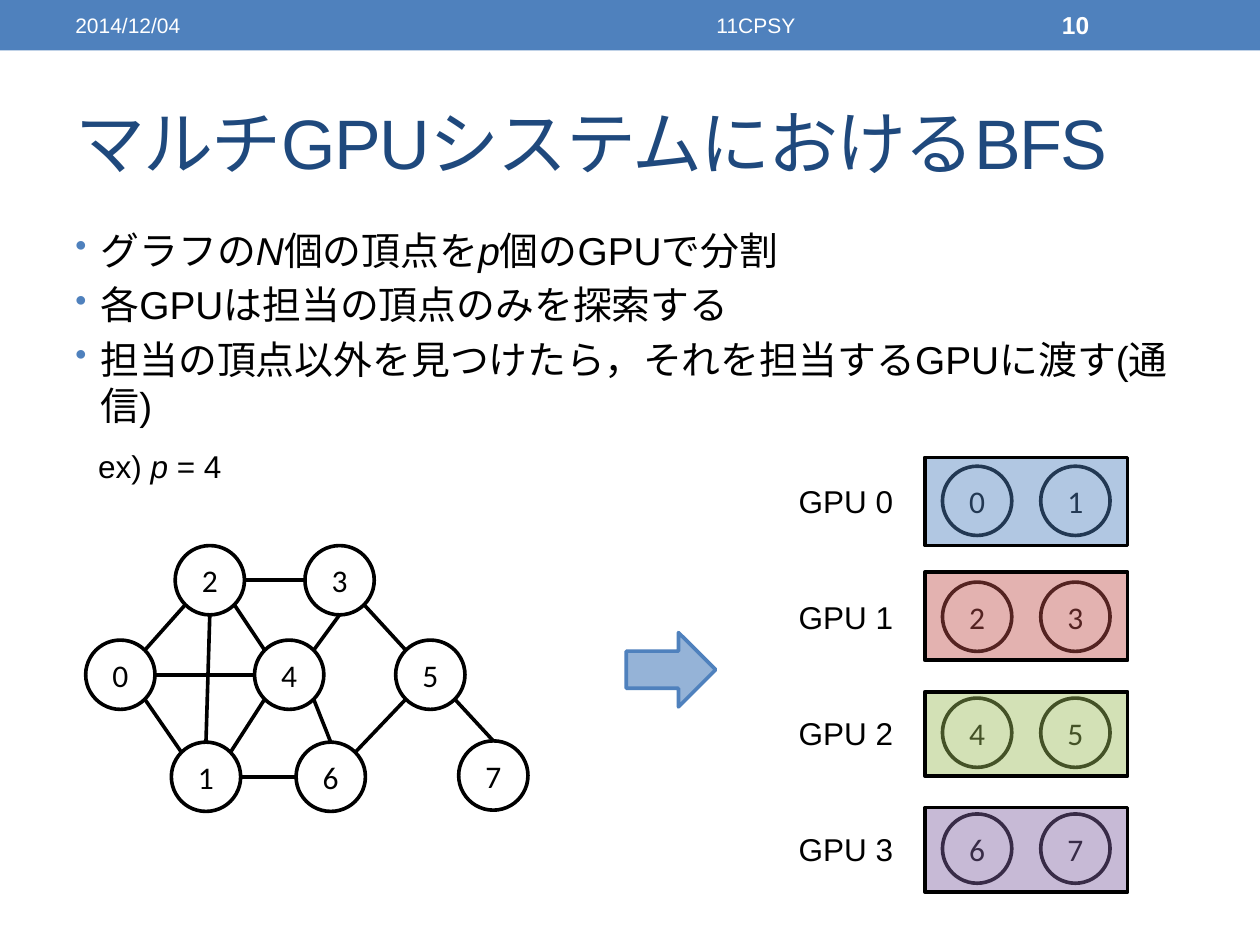
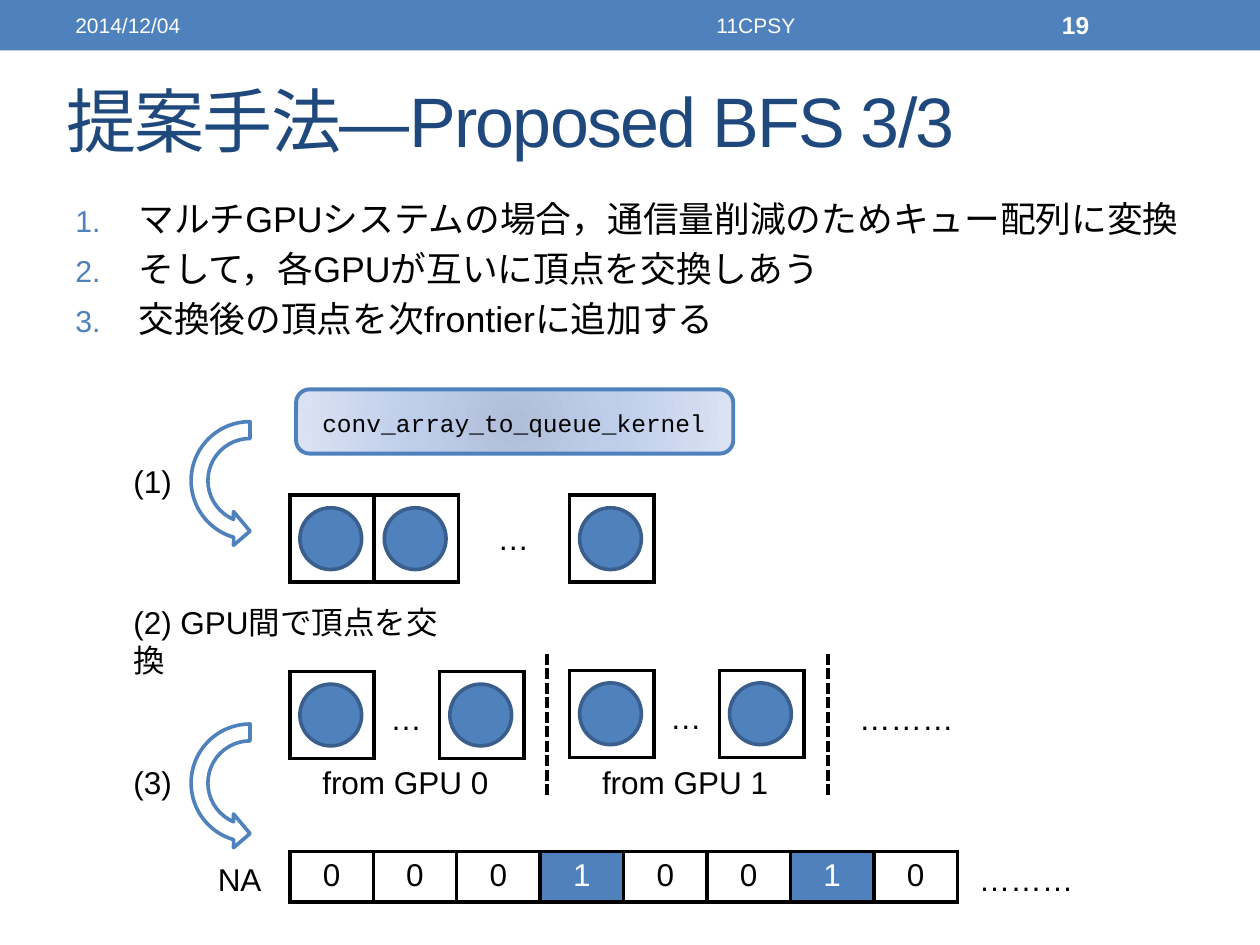
from dataclasses import dataclass
from math import sqrt

from lxml.etree import SubElement
from pptx import Presentation
from pptx.dml.color import RGBColor as RGB
from pptx.enum.dml import MSO_LINE as Dash
from pptx.enum.lang import MSO_LANGUAGE_ID as Lang
from pptx.enum.shapes import MSO_CONNECTOR as Conn, MSO_SHAPE as Kind
from pptx.enum.text import MSO_ANCHOR as Anchor, PP_ALIGN as Align
from pptx.oxml.ns import qn
from pptx.util import Inches, Pt


@dataclass(frozen=True)
class Theme:
    blue: str = "4F81BD"
    navy: str = "1F497D"
    pale: str = "95B3D7"
    edge: str = "3A5F8C"
    red: str = "C0504D"
    green: str = "9BBB59"
    mauve: str = "8064A2"
    black: str = "000000"
    white: str = "FFFFFF"
    sans: str = "Arial"
    round: str = "Calibri"
    mono: str = "Courier New"
    head: float = 40
    label: float = 18
    code: float = 14
    foot: float = 12
    line: float = 2.08
    border: float = 2.25


T = Theme()


def add(parent, tag, **attrs):
    return SubElement(parent, qn(tag), {k: str(v) for k, v in attrs.items()})


class Deck:
    def __init__(self):
        self.prs = Presentation()
        self.prs.slide_width = Inches(10)
        self.prs.slide_height = Inches(7.5)

    def start(self, title, number, left, top):
        self.slide = self.prs.slides.add_slide(self.prs.slide_layouts[6])
        self.shapes = self.slide.shapes
        self.shape(Kind.RECTANGLE, (0, 0, 10, 0.4), T.blue, None)
        self.text(title, (left, top, 9, 1.08), wrap=True, anchor=Anchor.MIDDLE,
                  size=T.head, color=T.navy, track=-100)
        bar = dict(wrap=True, anchor=Anchor.MIDDLE, color=T.white)
        self.text("2014/12/04", (0.5, 0.02, 3.17, 0.36), size=T.foot, **bar)
        self.text("11CPSY", (3.75, 0.02, 4.5, 0.36), size=T.foot,
                  align=Align.CENTER, **bar)
        self.text(str(number), (8.33, 0.02, 1.17, 0.36), size=T.code,
                  bold=True, **bar)

    def fill_in(self, para, parts, size=T.label, color=T.black, face=T.sans,
                bold=False, align=Align.LEFT, track=None):
        para.alignment = align
        for part in [parts] if isinstance(parts, str) else parts:
            words, slant = (part, False) if isinstance(part, str) else part
            run = para.add_run()
            run.text = words
            look = dict(name=face, size=Pt(size), bold=bold, italic=slant,
                        language_id=Lang.JAPANESE)
            for key, value in look.items():
                setattr(run.font, key, value)
            run.font.color.rgb = RGB.from_string(color)
            props = run._r.get_or_add_rPr()
            add(props, "a:ea", typeface=face)
            if track:
                props.set("spc", str(track))

    def text(self, parts, at, wrap=False, anchor=Anchor.TOP, **look):
        frame = self.shapes.add_textbox(*map(Inches, at)).text_frame
        frame.word_wrap = wrap
        frame.vertical_anchor = anchor
        self.fill_in(frame.paragraphs[0], parts, **look)

    def items(self, rows, at, size, indent, mark, **kind):
        frame = self.shapes.add_textbox(*map(Inches, at)).text_frame
        frame.word_wrap = True
        for i, parts in enumerate(rows):
            para = frame.add_paragraph() if i else frame.paragraphs[0]
            para.space_before = Pt(round(size * 0.2, 1))
            self.fill_in(para, parts, size=size)
            props = para._p.get_or_add_pPr()
            props.set("marL", str(Inches(indent)))
            props.set("indent", str(-Inches(indent)))
            add(add(props, "a:buClr"), "a:srgbClr", val=T.blue)
            add(props, "a:buSzPct", val=85000)
            add(props, mark, **kind)

    def shape(self, kind, at, fill=None, line=T.black, width=T.line,
              alpha=None, words=None):
        item = self.shapes.add_shape(kind, *map(Inches, at))
        item.shadow.inherit = False
        if fill:
            item.fill.solid()
            item.fill.fore_color.rgb = RGB.from_string(fill)
        else:
            item.fill.background()
        if alpha:
            tint = item._element.spPr.find(".//" + qn("a:srgbClr"))
            add(tint, "a:alpha", val=alpha * 1000)
        if line:
            item.line.color.rgb = RGB.from_string(line)
            item.line.width = Pt(width)
        else:
            item.line.fill.background()
        if words:
            item.text_frame.vertical_anchor = Anchor.MIDDLE
            self.fill_in(item.text_frame.paragraphs[0], words, face=T.round,
                         align=Align.CENTER)
        return item

    def glow(self, item, stops):
        props = item._element.spPr
        props.remove(props.find(qn("a:noFill")))
        grad = add(props, "a:gradFill", rotWithShape=1)
        props.insert(list(props).index(props.find(qn("a:prstGeom"))) + 1, grad)
        group = add(grad, "a:gsLst")
        for pos, color in stops:
            add(add(group, "a:gs", pos=pos * 1000), "a:srgbClr", val=color)
        ring = add(grad, "a:path", path="circle")
        add(ring, "a:fillToRect", l=50000, t=50000, r=50000, b=50000)

    def line(self, start, end, dash=None):
        item = self.shapes.add_connector(
            Conn.STRAIGHT, *map(Inches, (*start, *end)))
        item.line.color.rgb = RGB.from_string(T.black)
        item.line.width = Pt(T.line)
        if dash:
            item.line.dash_style = dash
        add(item._element.spPr, "a:effectLst")

    def table(self, at, cells):
        grid = self.shapes.add_table(1, len(cells), *map(Inches, at)).table
        grid.first_row = grid.horz_banding = False
        for cell, word in zip(grid.iter_cells(), cells):
            props = cell._tc.get_or_add_tcPr()
            for side in "LRTB":
                edge = add(props, f"a:ln{side}", w=Pt(T.border))
                add(add(edge, "a:solidFill"), "a:srgbClr", val=T.black)
            on = word == "1"
            if on:
                cell.fill.solid()
                cell.fill.fore_color.rgb = RGB.from_string(T.blue)
            else:
                cell.fill.background()
            if word:
                self.fill_in(cell.text_frame.paragraphs[0], word,
                             color=T.white if on else T.black,
                             align=Align.CENTER)

    def slots(self, left, top, count=1):
        pitch = 0.67
        self.table((left, top, pitch * count, 0.69), [""] * count)
        for i in range(count):
            self.shape(Kind.OVAL, (left + 0.08 + pitch * i, top + 0.1, 0.49, 0.49),
                       T.blue, T.edge)

    def curl(self, top):
        item = self.shape(Kind.CIRCULAR_ARROW, (1.45, top, 1.07, 1.07),
                          T.white, T.blue)
        item.rotation = 90
        item._element.spPr.find(qn("a:xfrm")).set("flipV", "1")


def divide(deck):
    deck.start("マルチGPUシステムにおけるBFS", 10, 0.5, 0.58)
    deck.items([
        ["グラフの", ("N", True), "個の頂点を", ("p", True), "個のGPUで分割"],
        "各GPUは担当の頂点のみを探索する",
        "担当の頂点以外を見つけたら，それを担当するGPUに渡す(通信)",
    ], (0.5, 1.75, 9, 1.48), 22.2, 0.2, "a:buChar", char="•")
    deck.text(["ex) ", ("p", True), " = 4"], (0.68, 3.5, 1.19, 0.4))
    deck.shape(Kind.RIGHT_ARROW, (4.97, 5.02, 0.71, 0.59), T.pale, T.blue)

    size = 0.55
    boxes = [(3.63, 0.7, T.blue), (4.54, 0.7, T.red),
             (5.49, 0.67, T.green), (6.41, 0.67, T.mauve)]
    for i, (top, high, color) in enumerate(boxes):
        step = 0.92 * i
        deck.text(f"GPU {i}", (6.24, 3.78 + step, 0.96, 0.4))
        for j, left in enumerate((7.48, 8.26)):
            deck.shape(Kind.OVAL, (left, 3.7 + step, size, size),
                       words=str(2 * i + j))
        deck.shape(Kind.RECTANGLE, (7.34, top, 1.61, high), color, alpha=44)

    nodes = [(0.68, 5.08), (1.36, 5.89), (1.39, 4.33), (2.42, 4.33),
             (2.02, 5.08), (3.14, 5.08), (2.35, 5.89), (3.64, 5.88)]
    for i, (left, top) in enumerate(nodes):
        deck.shape(Kind.OVAL, (left, top, size, size), T.white, words=str(i))

    half = size / 2
    turn = {"N": (0, -1), "S": (0, 1), "E": (1, 0), "W": (-1, 0)}

    def port(name):
        left, top = nodes[int(name[0])]
        ways = [turn[c] for c in name[1:]]
        reach = half / sqrt(len(ways))
        return (left + half + reach * sum(x for x, _ in ways),
                top + half + reach * sum(y for _, y in ways))

    edges = ("2SW-0NE 0SE-1NW 2SE-4NW 3SE-5NW 4SE-6N 1E-6W 4SW-1NE "
             "0E-4W 2S-1N 2E-3W 3S-4NE 5SW-6NE 5SE-7N")
    for edge in edges.split():
        deck.line(*map(port, edge.split("-")))


def swap(deck):
    deck.start("提案手法―Proposed BFS 3/3", 19, 0.43, 0.41)
    deck.items([
        "マルチGPUシステムの場合，通信量削減のためキュー配列に変換",
        "そして，各GPUが互いに頂点を交換しあう",
        "交換後の頂点を次frontierに追加する",
    ], (0.5, 1.51, 9, 1.37), 20.4, 0.5, "a:buAutoNum", type="arabicPeriod")

    call = deck.shape(Kind.ROUNDED_RECTANGLE, (2.35, 3.09, 3.47, 0.51),
                      line=T.blue, width=T.border)
    call.adjustments[0] = 0.21
    deck.glow(call, [(0, "B0BED9"), (45, "BECDEA"), (100, "DBE3F3")])
    deck.text("conv_array_to_queue_kernel", (2.46, 3.19, 3.27, 0.34),
              size=T.code, face=T.mono)

    deck.slots(2.3, 3.93, 2)
    deck.slots(4.52, 3.93)
    deck.text("…", (3.85, 4.07, 0.45, 0.4))
    deck.text("(2) GPU間で頂点を交換", (0.96, 4.74, 2.84, 0.4), wrap=True)

    for i, left in enumerate((2.3, 4.52)):
        top = 5.33 - 0.01 * i
        deck.slots(left, top)
        deck.text("…", (left + 0.7, top + 0.17, 0.45, 0.4))
        deck.slots(left + 1.19, top)
        deck.text(f"from GPU {i}", (left + 0.16, 6.01, 1.53, 0.4))
    for x in (4.34, 6.57):
        deck.line((x, 5.19), (x, 6.32), Dash.SQUARE_DOT)
    for left, top in ((6.72, 5.5), (7.67, 6.78)):
        deck.text("………", (left, top, 0.96, 0.4))

    deck.table((2.3, 6.76, 5.3, 0.4), "00010010")
    deck.text("NA", (1.63, 6.78, 0.55, 0.4))
    for mark, top, curl in (("(1)", 3.62, 3.28), ("(3)", 6.01, 5.68)):
        deck.curl(curl)
        deck.text(mark, (0.96, top, 0.51, 0.4))


def main():
    deck = Deck()
    divide(deck)
    swap(deck)
    deck.prs.save("out.pptx")


if __name__ == "__main__":
    main()
